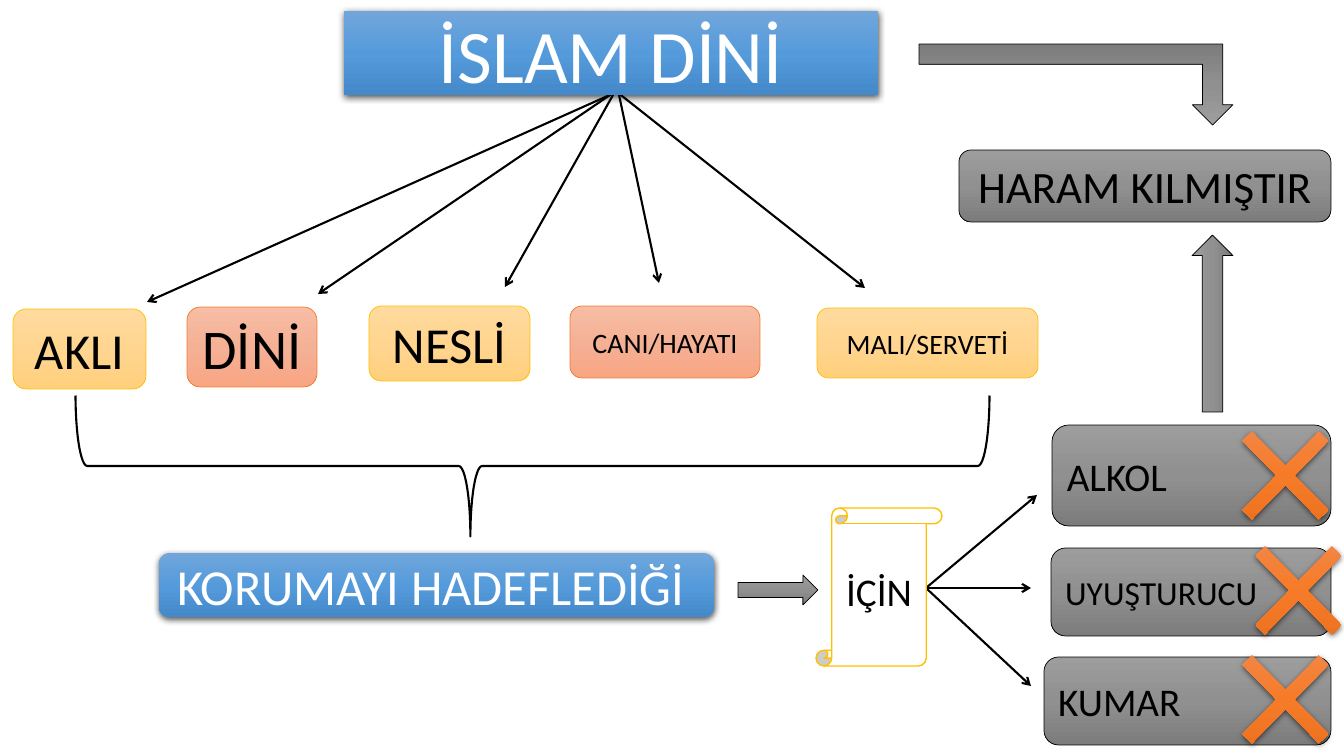
from copy import deepcopy

from lxml.etree import SubElement
from pptx import Presentation
from pptx.dml.color import RGBColor
from pptx.enum.shapes import MSO_CONNECTOR, MSO_SHAPE
from pptx.enum.text import MSO_ANCHOR, MSO_AUTO_SIZE, PP_ALIGN
from pptx.oxml.ns import qn
from pptx.util import Emu, Pt

EMU_PER_INCH = 914400
PX_PER_INCH = 100.8
FONT = "Calibri"

COLORS = {"black": "000000", "white": "FFFFFF", "gold": "FFC000", "orange": "ED7D31"}
GRADIENTS = {
    "gold": ("FFDB9E", "FFD590", "FFD07C"),
    "peach": ("F7BDA5", "F5B196", "F8A582"),
    "gray": ("9D9D9D", "909090", "7C7C7C"),
    "blue": ("71A6DB", "559BDB", "448ACA"),
    "orange": ("F18C57", "F67B28", "E56C19"),
}

# Boxes as left, top, width, height in px
PROTECTED = [
    ("AKLI", (13, 309, 133, 80), 36, "gold", "gold"),
    ("DİNİ", (187, 307, 130, 80), 40, "peach", "orange"),
    ("NESLİ", (369, 306, 161, 75), 36, "gold", "gold"),
    ("CANI/HAYATI", (570, 306, 190, 72), 20, "peach", "orange"),
    ("MALI/SERVETİ", (817, 308, 221, 70), 20, "gold", "gold"),
]
FORBIDDEN = [
    ("ALKOL", (1052, 425, 279, 101), 28, (1212, 400)),
    ("UYUŞTURUCU", (1051, 548, 280, 88), 24, (1225, 515)),
    ("KUMAR", (1044, 657, 287, 88), 28, (1212, 624)),
]
TITLE_ARROWS = [
    ((621, 90), (147, 302)),
    ((613, 93), (318, 294)),
    ((617, 88), (505, 287)),
    ((618, 90), (659, 283)),
    ((617, 92), (865, 288)),
]
FAN_START = (926, 588)
FAN_ENDS = [(1037, 495), (1031, 588), (1031, 686)]


def px(value):
    return Emu(round(value * EMU_PER_INCH / PX_PER_INCH))


def rgb(name):
    return RGBColor.from_string(COLORS[name])


def fill_gradient(shape, name):
    """Fill with three even stops running from top to bottom."""
    shape.fill.gradient()
    shape.fill.gradient_angle = 270
    stop_list = shape.element.spPr.find(".//" + qn("a:gsLst"))
    stop_list.insert(1, deepcopy(stop_list[0]))
    for index, (stop, color) in enumerate(zip(shape.fill.gradient_stops, GRADIENTS[name])):
        stop.position = index / 2
        stop.color.rgb = RGBColor.from_string(color)


def add_shadow(shape):
    effects = shape.element.spPr.find(qn("a:effectLst"))
    shadow = SubElement(effects, qn("a:outerShdw"), blurRad=str(Pt(4.5)),
                        dist=str(Pt(1.5)), dir="5400000", rotWithShape="0")
    color = SubElement(shadow, qn("a:srgbClr"), val=COLORS["black"])
    SubElement(color, qn("a:alpha"), val="63000")


def style_shape(shape, gradient=None, fill=None, line=None, width=0.5, shadow=False):
    if gradient:
        fill_gradient(shape, gradient)
    elif fill:
        shape.fill.solid()
        shape.fill.fore_color.rgb = rgb(fill)
    else:
        shape.fill.background()
    if line:
        shape.line.color.rgb = rgb(line)
        shape.line.width = Pt(width)
    else:
        shape.line.fill.background()
    shape.shadow.inherit = False
    if shadow:
        add_shadow(shape)


def add_block(slide, kind, box, rotation=0, adjustments=(), **style):
    shape = slide.shapes.add_shape(kind, *map(px, box))
    shape.rotation = rotation
    for index, value in enumerate(adjustments):
        shape.adjustments[index] = value
    style_shape(shape, **style)
    return shape


def set_text(shape, text, size=28, color="black", align=PP_ALIGN.CENTER):
    frame = shape.text_frame
    frame.word_wrap = True
    frame.auto_size = MSO_AUTO_SIZE.NONE
    frame.vertical_anchor = MSO_ANCHOR.MIDDLE
    paragraph = frame.paragraphs[0]
    paragraph.alignment = align
    run = paragraph.add_run()
    run.text = text
    run.font.name = FONT
    run.font.size = Pt(size)
    run.font.color.rgb = rgb(color)


def add_arrow(slide, start, end):
    connector = slide.shapes.add_connector(MSO_CONNECTOR.STRAIGHT, *map(px, start + end))
    connector.line.color.rgb = rgb("black")
    connector.line.width = Pt(1.5)
    properties = connector.element.spPr
    SubElement(properties.find(qn("a:ln")), qn("a:tailEnd"), type="arrow")
    SubElement(properties, qn("a:effectLst"))


def place_title(slide, text, box):
    """Turn the title placeholder into a rounded banner above the arrows."""
    title = slide.shapes.title
    title.left, title.top, title.width, title.height = map(px, box)
    properties = title.element.spPr
    geometry = SubElement(properties, qn("a:prstGeom"), prst="roundRect")
    SubElement(geometry, qn("a:avLst"))
    properties.insert(1, geometry)
    style_shape(title, gradient="blue", shadow=True)
    set_text(title, text, size=54, color="white")
    title.element.getparent().append(title.element)


def main():
    presentation = Presentation()
    presentation.slide_width, presentation.slide_height = px(1344), px(756)
    slide = presentation.slides.add_slide(presentation.slide_layouts[5])
    rounded = MSO_SHAPE.ROUNDED_RECTANGLE
    gray = {"gradient": "gray", "line": "black"}

    # Title with arrows to the five protected values
    for start, end in TITLE_ARROWS:
        add_arrow(slide, start, end)
    place_title(slide, "İSLAM DİNİ", (344, 11, 534, 84))
    for text, box, size, gradient, line in PROTECTED:
        set_text(add_block(slide, rounded, box, gradient=gradient, line=line), text, size=size)

    # Brace and the purpose below it
    add_block(slide, MSO_SHAPE.RIGHT_BRACE, (462, 9, 141, 914), rotation=90,
              adjustments=(0.083, 0.568), line="black", width=1.5)
    purpose = add_block(slide, rounded, (159, 553, 555, 64), gradient="blue", shadow=True)
    set_text(purpose, "KORUMAYI HADEFLEDİĞİ ", size=36, color="white")
    add_block(slide, MSO_SHAPE.RIGHT_ARROW, (738, 575, 80, 30), **gray)

    # Scroll with arrows to the forbidden things
    for end in FAN_ENDS:
        add_arrow(slide, FAN_START, end)
    scroll = add_block(slide, MSO_SHAPE.VERTICAL_SCROLL, (816, 508, 126, 158),
                       fill="white", line="gold", width=1)
    set_text(scroll, "İÇİN")

    # Forbidden things, each crossed out
    for text, box, size, cross in FORBIDDEN:
        set_text(add_block(slide, rounded, box, **gray), text, size=size, align=PP_ALIGN.LEFT)
        add_block(slide, MSO_SHAPE.MATH_MULTIPLY, cross + (147, 151), adjustments=(0.09,),
                  gradient="orange", shadow=True)

    # Verdict and the two block arrows leading to it
    verdict = add_block(slide, rounded, (959, 150, 372, 72), **gray)
    set_text(verdict, "HARAM KILMIŞTIR", size=32)
    add_block(slide, MSO_SHAPE.RIGHT_ARROW, (1124, 303, 177, 41), rotation=270, **gray)
    bent = add_block(slide, MSO_SHAPE.BENT_UP_ARROW, (919, 44, 314, 81), rotation=180, **gray)
    bent.element.spPr.find(qn("a:xfrm")).set("flipH", "1")

    presentation.save("out.pptx")


if __name__ == "__main__":
    main()
